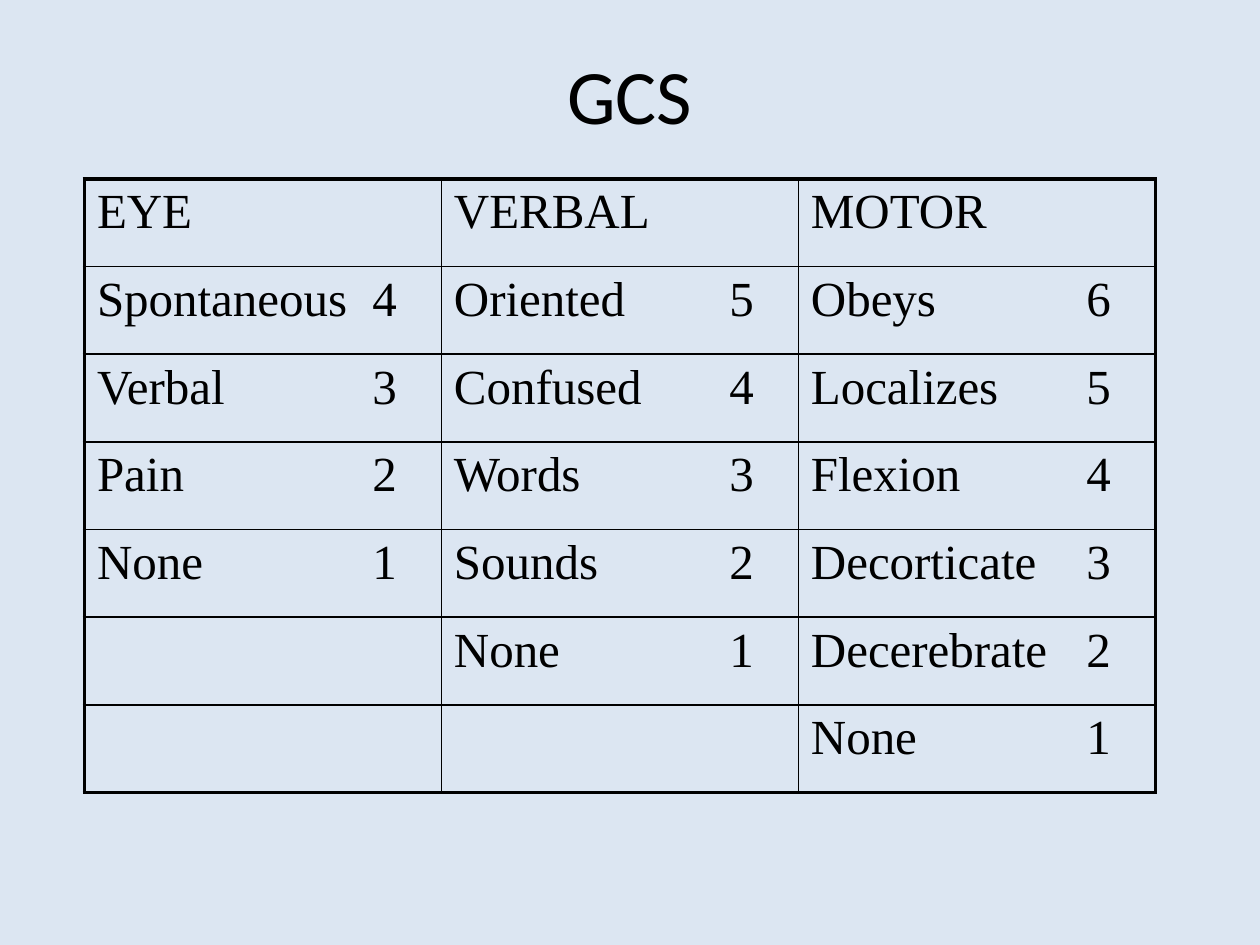
import pptx
import pptx.dml.color
import pptx.enum.text
import pptx.oxml
import pptx.oxml.ns
import pptx.util
from lxml import etree
from pptx.util import Inches

INK = "000000"
BACKGROUND = "DCE6F2"
SCORE_STOP = 2.38  # right edge of the scores, from the cell's text edge

COLUMNS = {
    "EYE": [("Spontaneous", 4), ("Verbal", 3), ("Pain", 2), ("None", 1)],
    "VERBAL": [("Oriented", 5), ("Confused", 4), ("Words", 3),
               ("Sounds", 2), ("None", 1)],
    "MOTOR": [("Obeys", 6), ("Localizes", 5), ("Flexion", 4),
              ("Decorticate", 3), ("Decerebrate", 2), ("None", 1)],
}


def colour(value):
    return pptx.dml.color.RGBColor.from_string(value)


def add_element(parent, tag, **attributes):
    element = etree.SubElement(parent, pptx.oxml.ns.qn(tag))
    for name, value in attributes.items():
        element.set(name, str(value))
    return element


class SlideBuilder:
    title_font, title_size = "Calibri", 44
    table_font, table_size = "Times New Roman", 28
    inner_line, outer_line = 1, 2.25

    def __init__(self, slide):
        self.slide = slide

    def background(self, value):
        fill = self.slide.background.fill
        fill.solid()
        fill.fore_color.rgb = colour(value)

    def span(self, para, text, font, size):
        span = para.add_run()
        span.text = text
        span.font.name = font
        span.font.size = pptx.util.Pt(size)
        span.font.color.rgb = colour(INK)

    def title(self, text, left, top, width, height):
        box = self.slide.shapes.add_textbox(
            Inches(left), Inches(top), Inches(width), Inches(height))
        frame = box.text_frame
        frame.word_wrap = True
        frame.vertical_anchor = pptx.enum.text.MSO_ANCHOR.MIDDLE
        para = frame.paragraphs[0]
        para.alignment = pptx.enum.text.PP_ALIGN.CENTER
        self.span(para, text, self.title_font, self.title_size)

    def borders(self, cell, widths):
        properties = cell._tc.get_or_add_tcPr()
        for index, (side, points) in enumerate(widths.items()):
            line = add_element(properties, "a:ln" + side, w=pptx.util.Pt(points))
            fill = add_element(line, "a:solidFill")
            add_element(fill, "a:srgbClr", val=INK)
            properties.insert(index, line)  # lines come before the fill

    def cell_text(self, cell, text):
        para = cell.text_frame.paragraphs[0]
        properties = para._p.get_or_add_pPr()
        spacing = add_element(properties, "a:spcBef")
        add_element(spacing, "a:spcPct", val=20000)
        stops = add_element(properties, "a:tabLst")
        add_element(stops, "a:tab", pos=Inches(SCORE_STOP), algn="r")
        self.span(para, text, self.table_font, self.table_size)

    def table(self, columns, left, top, width, height):
        column_count = len(columns)
        row_count = 1 + max(len(entries) for entries in columns.values())
        table = self.slide.shapes.add_table(
            row_count, column_count, Inches(left), Inches(top),
            Inches(width), Inches(height)).table
        table.first_row = table.horz_banding = False

        for c, (heading, entries) in enumerate(columns.items()):
            texts = [heading] + [f"{name}\t{score}" for name, score in entries]
            for r in range(row_count):
                cell = table.cell(r, c)
                cell.fill.background()
                outer = {"L": c == 0, "R": c == column_count - 1,
                         "T": r == 0, "B": r == row_count - 1}
                self.borders(cell, {
                    side: self.outer_line if edge else self.inner_line
                    for side, edge in outer.items()})
                if r < len(texts):
                    self.cell_text(cell, texts[r])


def main():
    deck = pptx.Presentation()
    deck.slide_width, deck.slide_height = Inches(10), Inches(7.5)
    page = SlideBuilder(deck.slides.add_slide(deck.slide_layouts[6]))

    # Background and title
    page.background(BACKGROUND)
    page.title("GCS", 0.75, 0.25, 8.5, 0.98)

    # Score table
    page.table(COLUMNS, 0.67, 1.42, 8.5, 4.87)

    deck.save("out.pptx")


if __name__ == "__main__":
    main()
